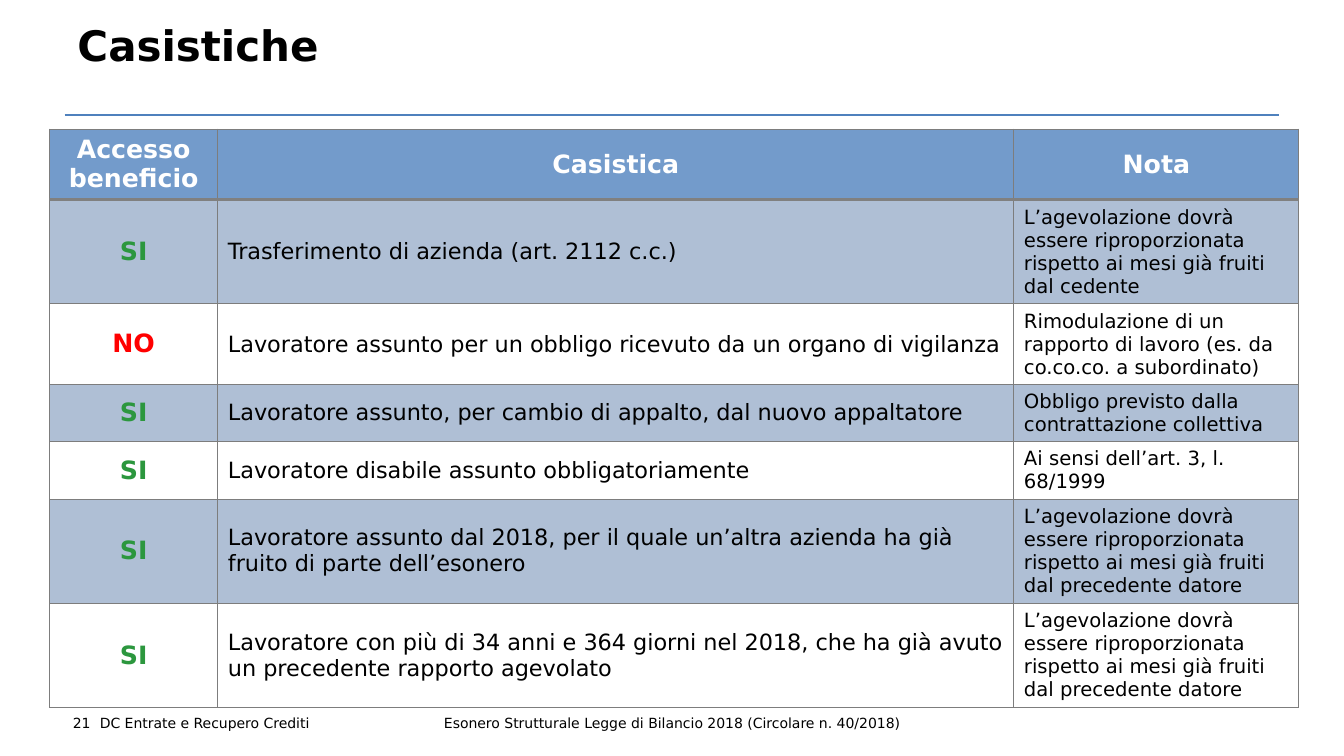
import pptx
import pptx.util
import pptx.dml.color
import pptx.enum.shapes
import pptx.enum.text
import pptx.oxml

WIDE, HIGH = pptx.util.Inches(13.33), pptx.util.Inches(7.5)
FONT = "DejaVu Sans"
COLORS = {"text": "000000", "rule": "4F81BD", "head": "739BCB", "band": "AFBFD5",
          "plain": "FFFFFF", "SI": "2C973E", "NO": "FF0000",
          "edge": "7D7D7D", "base": "808080"}
ALIGN = pptx.enum.text.PP_ALIGN
ANCHOR = pptx.enum.text.MSO_ANCHOR
NS = "http://schemas.openxmlformats.org/drawingml/2006/main"

HEADS = ("Accesso beneficio", "Casistica", "Nota")
SHARE = "L’agevolazione dovrà essere riproporzionata rispetto ai mesi già fruiti dal "
# Access, case, note, lines taken by the note
CASES = (
    ("SI", "Trasferimento di azienda (art. 2112 c.c.)", SHARE + "cedente", 4),
    ("NO", "Lavoratore assunto per un obbligo ricevuto da un organo di vigilanza",
     "Rimodulazione di un rapporto di lavoro (es. da co.co.co. a subordinato)", 3),
    ("SI", "Lavoratore assunto, per cambio di appalto, dal nuovo appaltatore",
     "Obbligo previsto dalla contrattazione collettiva", 2),
    ("SI", "Lavoratore disabile assunto obbligatoriamente",
     "Ai sensi dell’art. 3, l. 68/1999", 2),
    ("SI", "Lavoratore assunto dal 2018, per il quale un’altra azienda ha già "
     "fruito di parte dell’esonero", SHARE + "precedente datore", 4),
    ("SI", "Lavoratore con più di 34 anni e 364 giorni nel 2018, che ha già avuto "
     "un precedente rapporto agevolato", SHARE + "precedente datore", 4),
)


# Shares of the slide, in percent
def across(share):
    return round(WIDE * share / 100)


def down(share):
    return round(HIGH * share / 100)


def tint(name):
    return pptx.dml.color.RGBColor.from_string(COLORS[name])


def write(frame, text, size, color="text", bold=False, align=ALIGN.LEFT):
    frame.text = text
    frame.word_wrap = True
    para = frame.paragraphs[0]
    para.alignment = align
    font = para.runs[0].font
    font.name, font.size, font.bold = FONT, pptx.util.Pt(size), bold
    font.color.rgb = tint(color)
    return para


def add_text(slide, area, text, size, inset, anchor=ANCHOR.MIDDLE, **style):
    x, y, w, h = area
    box = slide.shapes.add_textbox(across(x), down(y), across(w), down(h))
    frame = box.text_frame
    frame.vertical_anchor = anchor
    frame.margin_left = frame.margin_right = pptx.util.Inches(inset)
    frame.margin_top = frame.margin_bottom = pptx.util.Inches(min(inset, 0.05))
    return write(frame, text, size, **style)


def add_rule(slide, left, right, y):
    kind = pptx.enum.shapes.MSO_CONNECTOR.STRAIGHT
    rule = slide.shapes.add_connector(kind, across(left), down(y), across(right), down(y))
    rule.line.color.rgb = tint("rule")
    rule.line.width = pptx.util.Pt(1.5)
    props = rule.element.find(".//{*}spPr")
    props.append(pptx.oxml.parse_xml(f'<a:effectLst xmlns:a="{NS}"/>'))


def edge_cell(cell, top, base):
    thin = ("edge", 0.75)
    props = cell._tc.get_or_add_tcPr()
    for side, (color, width) in zip("LRTB", (thin, thin, top, base)):
        props.append(pptx.oxml.parse_xml(
            f'<a:ln{side} xmlns:a="{NS}" w="{pptx.util.Pt(width)}"><a:solidFill>'
            f'<a:srgbClr val="{COLORS[color]}"/></a:solidFill></a:ln{side}>'))


def fill_cell(cell, row, col, text):
    thin, thick = ("edge", 0.75), ("base", 2)
    edge_cell(cell, thick if row == 1 else thin, thick if row == 0 else thin)
    cell.fill.solid()
    cell.fill.fore_color.rgb = tint("head" if row == 0 else "band" if row % 2 else "plain")
    cell.vertical_anchor = ANCHOR.MIDDLE
    if row == 0 or col == 0:
        color = "plain" if row == 0 else text
        write(cell.text_frame, text, 18, color, True, ALIGN.CENTER)
    else:
        write(cell.text_frame, text, 16 if col == 1 else 14)


def add_cases(slide, left, top, cols):
    # Row height follows the number of lines in it
    rows = [9.13] + [1.33 + 3.03 * case[3] for case in CASES]
    table = slide.shapes.add_table(len(rows), len(cols), across(left), down(top),
                                   across(sum(cols)), down(sum(rows))).table
    table.first_row = table.horz_banding = False
    for col, share in enumerate(cols):
        table.columns[col].width = across(share)
    for row, texts in enumerate((HEADS,) + CASES):
        table.rows[row].height = down(rows[row])
        for col, text in enumerate(texts[:3]):
            fill_cell(table.cell(row, col), row, col, text)


def main():
    deck = pptx.Presentation()
    deck.slide_width, deck.slide_height = WIDE, HIGH
    slide = deck.slides.add_slide(deck.slide_layouts[6])

    # Heading
    add_rule(slide, 4.8, 95.2, 15.2)
    title = add_text(slide, (5.03, 2.93, 90.1, 12.27), "Casistiche", 30, 0.1,
                     ANCHOR.TOP, bold=True)
    title.line_spacing = 0.85

    # Footer
    add_text(slide, (5.03, 93.2, 2.1, 4.8), "21", 10, 0, align=ALIGN.CENTER)
    add_text(slide, (7.13, 94, 23.03, 3.2), "DC Entrate e Recupero Crediti", 10, 0.04)
    add_text(slide, (32.26, 94, 35.48, 3.2),
             "Esonero Strutturale Legge di Bilancio 2018 (Circolare n. 40/2018)",
             10, 0.04, align=ALIGN.CENTER)

    # Table of cases
    add_cases(slide, 3.68, 17.07, (12.53, 59.23, 21.2))
    deck.save("out.pptx")


if __name__ == "__main__":
    main()
